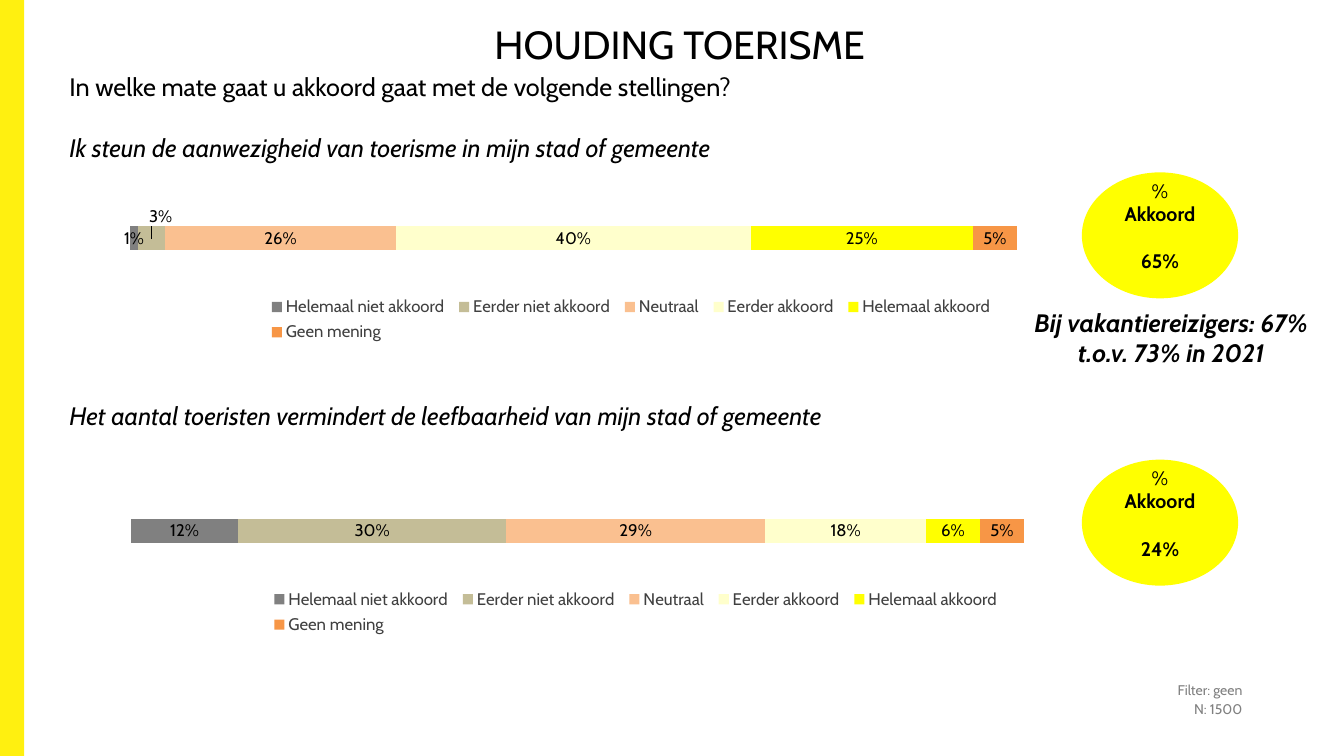
from lxml import etree
from pptx import Presentation, util as u
from pptx.chart import data
from pptx.dml import color
from pptx.enum import chart as ch, shapes, text
from pptx.oxml import ns

FONT = "Cabin"
LEVELS = [
    ("Helemaal niet akkoord", "808080"),
    ("Eerder niet akkoord", "C4BD97"),
    ("Neutraal", "FAC090"),
    ("Eerder akkoord", "FFFFCC"),
    ("Helemaal akkoord", "FFFF00"),
    ("Geen mening", "F79646"),
]


def rgb(code):
    return color.RGBColor.from_string(code)


def style(font, size, tint="000000", bold=False, italic=False):
    font.name = FONT
    font.size = u.Pt(size)
    font.color.rgb = rgb(tint)
    font.bold = bold
    font.italic = italic


def place(shape, left, top, width, height):
    shape.left, shape.top = u.Inches(left), u.Inches(top)
    shape.width, shape.height = u.Inches(width), u.Inches(height)


def write(shape, lines, size, align="LEFT", anchor="TOP", gaps=(), bolds=(), **look):
    frame = shape.text_frame
    frame.word_wrap = True
    frame.auto_size = text.MSO_AUTO_SIZE.NONE
    frame.vertical_anchor = text.MSO_ANCHOR[anchor]
    frame.text = "\n".join(lines)
    for i, para in enumerate(frame.paragraphs):
        para.alignment = text.PP_ALIGN[align]
        if i in gaps:
            para.space_before = u.Pt(gaps[i])
        style(para.font, size, **{**look, "bold": look.get("bold", i in bolds)})


def label(slide, box, lines, size, **look):
    shape = slide.shapes.add_textbox(0, 0, 0, 0)
    place(shape, *box)
    write(shape, lines, size, **look)


def solid(slide, kind, box, fill):
    shape = slide.shapes.add_shape(kind, 0, 0, 0, 0)
    place(shape, *box)
    shape.shadow.inherit = False
    shape.fill.solid()
    shape.fill.fore_color.rgb = rgb(fill)
    shape.line.fill.background()
    return shape


def score(slide, top, share):
    disc = solid(slide, shapes.MSO_SHAPE.FLOWCHART_CONNECTOR,
                 (10.73, top, 1.55, 1.25), "FFFF00")
    write(disc, ["%", "Akkoord", share], 14, align="CENTER", anchor="MIDDLE",
          gaps={2: 17}, bolds=(1, 2))
    disc.text_frame.margin_bottom = u.Inches(0.24)


def layout(x, y, w=None, h=None, inner=False):
    root = etree.Element(ns.qn("c:layout"))
    hand = etree.SubElement(root, ns.qn("c:manualLayout"))
    parts = [("x", x), ("y", y)]
    if w:
        parts = [("xMode", "edge"), ("yMode", "edge"), *parts, ("w", w), ("h", h)]
    if inner:
        parts.insert(0, ("layoutTarget", "inner"))
    for name, val in parts:
        etree.SubElement(hand, ns.qn("c:" + name)).set("val", str(val))
    return root


def swap(parent, item, index):
    for old in parent.findall(ns.qn("c:layout")):
        parent.remove(old)
    parent.insert(index, item)


def nudge(chart, point, x, y):
    style(point.data_label.font, 12)
    point.data_label.position = ch.XL_LABEL_POSITION.CENTER
    tag = chart.element.xpath(".//c:dLbl")[0]
    tag.insert(1, layout(x, y))
    form = etree.Element(ns.qn("c:numFmt"), formatCode="###0%", sourceLinked="0")
    tag.insert(2, form)


def bar(slide, left, top, shares):
    table = data.CategoryChartData(number_format="###0%")
    table.categories = ["1"]
    for (name, tint), share in zip(LEVELS, shares):
        table.add_series(name, [share])
    frame = slide.shapes.add_chart(
        ch.XL_CHART_TYPE.BAR_STACKED_100, u.Inches(left), u.Inches(top),
        u.Inches(8.86), u.Inches(1.54), table)
    chart = frame.chart
    style(chart.font, 10)
    chart.has_title = False
    chart.category_axis.visible = False
    chart.value_axis.visible = False
    chart.value_axis.has_major_gridlines = False
    plot = chart.plots[0]
    plot.gap_width, plot.overlap = 150, 100
    plot.vary_by_categories = False
    for row, (name, tint) in zip(plot.series, LEVELS):
        row.format.fill.solid()
        row.format.fill.fore_color.rgb = rgb(tint)
        tags = row.data_labels
        tags.show_value = True
        tags.number_format = "###0%"
        tags.number_format_is_linked = False
        tags.position = ch.XL_LABEL_POSITION.CENTER
        style(tags.font, 12)
    chart.has_legend = True
    chart.legend.position = ch.XL_LEGEND_POSITION.BOTTOM
    chart.legend.include_in_layout = False
    style(chart.legend.font, 12, "404040")
    swap(chart.element.xpath(".//c:plotArea")[0],
         layout(0, 0.064, 1, 0.387, inner=True), 0)
    swap(chart.element.xpath(".//c:legend")[0], layout(0.15, 0.6, 0.83, 0.36), 1)
    return chart


def main():
    deck = Presentation()
    deck.slide_width, deck.slide_height = u.Inches(13.33), u.Inches(7.5)
    slide = deck.slides.add_slide(deck.slide_layouts[5])
    solid(slide, shapes.MSO_SHAPE.RECTANGLE, (0, 0, 0.24, 7.5), "FFF010")
    title = slide.shapes.title
    place(title, 0.19, -0.19, 13.1, 1.25)
    write(title, ["HOUDING TOERISME"], 28, align="CENTER", anchor="MIDDLE")

    label(slide, (0.59, 0.66, 12.56, 0.5),
          ["In welke mate gaat u akkoord gaat met de volgende stellingen?"], 18)
    label(slide, (0.59, 1.26, 10.27, 0.65),
          ["Ik steun de aanwezigheid van toerisme in mijn stad of gemeente"],
          18, italic=True)
    label(slide, (0.59, 3.92, 10.27, 0.65),
          ["Het aantal toeristen vermindert de leefbaarheid van mijn stad of gemeente"],
          18, italic=True)

    support = bar(slide, 1.23, 1.97, [0.01, 0.03, 0.26, 0.4, 0.25, 0.05])
    nudge(support, support.plots[0].series[1].points[0], 0.01, -0.14)
    bar(slide, 1.3, 4.87, [0.12, 0.3, 0.29, 0.18, 0.06, 0.05])

    score(slide, 1.71, "65%")
    score(slide, 4.56, "24%")
    label(slide, (10.09, 3, 3.05, 0.71),
          ["Bij vakantiereizigers: 67% t.o.v. 73% in 2021"], 18,
          align="CENTER", bold=True, italic=True)
    label(slide, (8.61, 6.71, 3.81, 0.53), ["Filter: geen", "N: 1500"], 10,
          align="RIGHT", gaps={1: 2}, tint="808080")
    deck.save("out.pptx")


if __name__ == "__main__":
    main()
